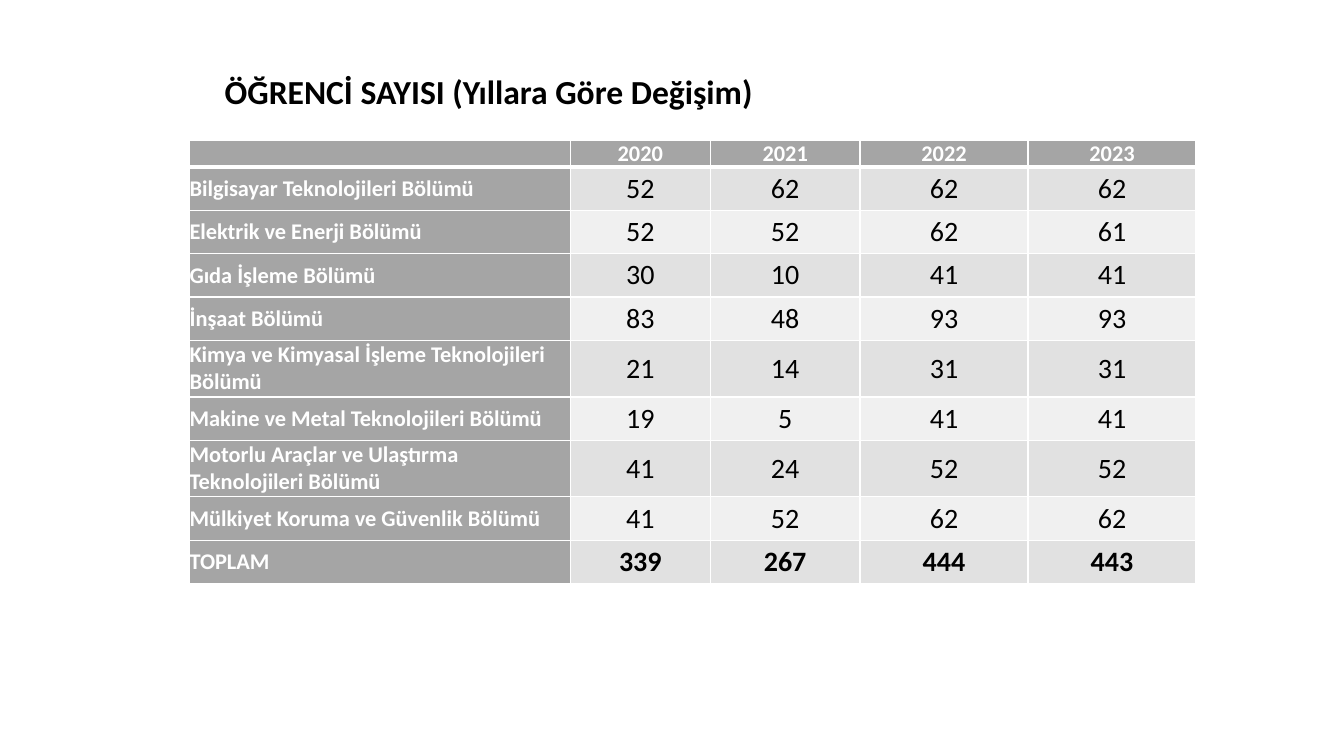
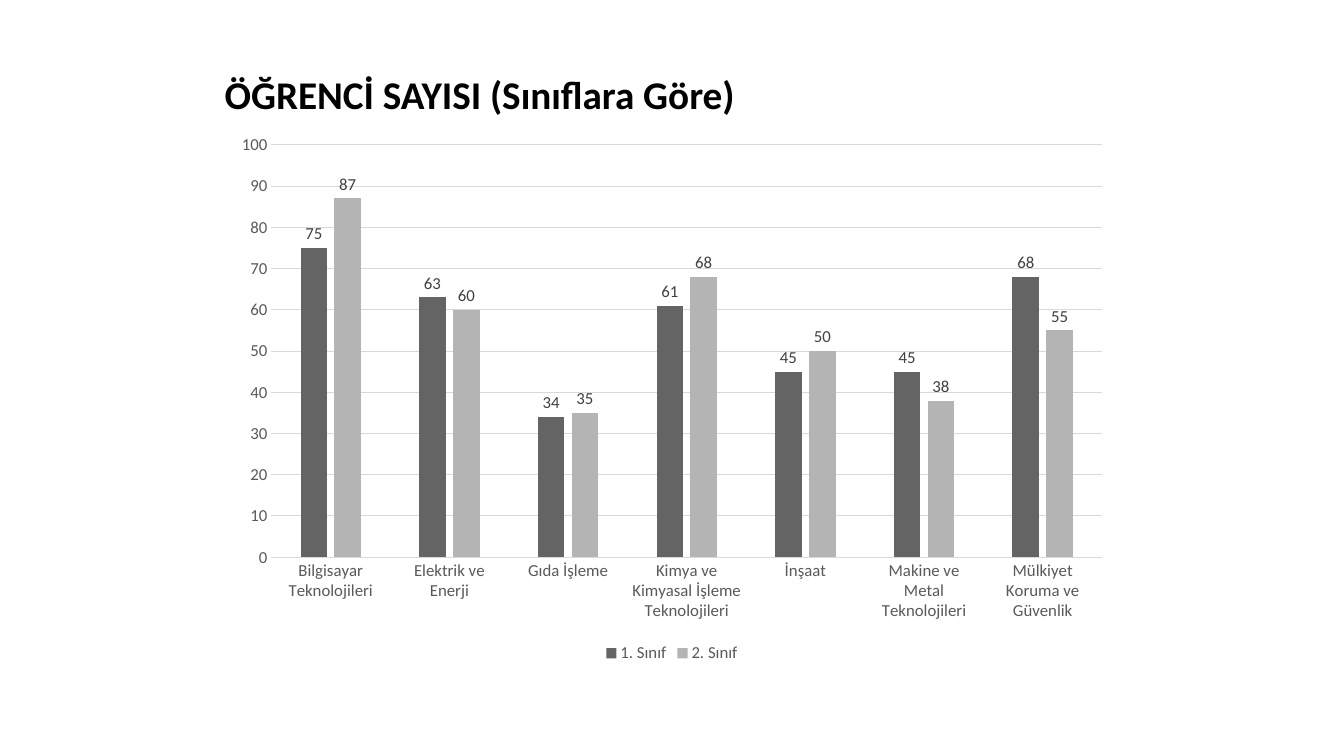
from lxml import etree
from pptx import Presentation
from pptx.chart.data import CategoryChartData
from pptx.dml.color import RGBColor
from pptx.enum.chart import XL_CHART_TYPE, XL_LABEL_POSITION, XL_LEGEND_POSITION, XL_TICK_MARK
from pptx.enum.text import MSO_ANCHOR, MSO_AUTO_SIZE, PP_ALIGN
from pptx.oxml.ns import qn
from pptx.util import Pt

COLUMN = XL_CHART_TYPE.COLUMN_CLUSTERED
OUTSIDE = XL_LABEL_POSITION.OUTSIDE_END
BOTTOM = XL_LEGEND_POSITION.BOTTOM
NO_TICK = XL_TICK_MARK.NONE
MIDDLE = MSO_ANCHOR.MIDDLE
LEFT, CENTER = PP_ALIGN.LEFT, PP_ALIGN.CENTER
FIT = MSO_AUTO_SIZE.SHAPE_TO_FIT_TEXT

FONT = "Calibri"
HEX = {
    "black": "000000", "white": "FFFFFF", "head": "A5A5A5",
    "odd": "E1E1E1", "even": "F0F0F0", "first": "646464",
    "second": "B4B4B4", "axis": "595959", "label": "404040", "grid": "D9D9D9",
}

YEARS = ["", "2020", "2021", "2022", "2023"]
ROWS = [
    ("Bilgisayar Teknolojileri Bölümü", 52, 62, 62, 62),
    ("Elektrik ve Enerji Bölümü", 52, 52, 62, 61),
    ("Gıda İşleme Bölümü", 30, 10, 41, 41),
    ("İnşaat Bölümü", 83, 48, 93, 93),
    ("Kimya ve Kimyasal İşleme Teknolojileri Bölümü", 21, 14, 31, 31),
    ("Makine ve Metal Teknolojileri Bölümü", 19, 5, 41, 41),
    ("Motorlu Araçlar ve Ulaştırma Teknolojileri Bölümü", 41, 24, 52, 52),
    ("Mülkiyet Koruma ve Güvenlik Bölümü", 41, 52, 62, 62),
    ("TOPLAM", 339, 267, 444, 443),
]
WIDTHS = [272, 100, 107, 120, 120]
HEAD, SINGLE, DOUBLE = 19.5, 30.9, 40.5
TALL = {5, 7}  # rows whose label takes two lines

CATS = [
    "Bilgisayar Teknolojileri", "Elektrik ve Enerji", "Gıda İşleme",
    "Kimya ve Kimyasal İşleme Teknolojileri", "İnşaat",
    "Makine ve Metal Teknolojileri", "Mülkiyet Koruma ve Güvenlik",
]
SERIES = [
    ("1. Sınıf", "first", [75, 63, 34, 61, 45, 45, 68]),
    ("2. Sınıf", "second", [87, 60, 35, 68, 50, 38, 55]),
]


def color(name):
    return RGBColor.from_string(HEX[name])


def style(font, size, tint, bold=False):
    for key, value in {"name": FONT, "size": Pt(size), "bold": bold}.items():
        setattr(font, key, value)
    font.color.rgb = color(tint)


def paint(fill, tint):
    fill.solid()
    fill.fore_color.rgb = color(tint)


def rule(line):
    line.color.rgb = color("grid")
    line.width = Pt(0.75)


def add_title(slide, text, size, box):
    frame = slide.shapes.add_textbox(*map(Pt, box)).text_frame
    frame.word_wrap = False
    frame.auto_size = FIT
    run = frame.paragraphs[0].add_run()
    run.text = text
    style(run.font, size, "black", True)


def edge(cell, widths):
    # Cell borders must come before the fill
    props = cell._tc.get_or_add_tcPr()
    for i, (side, width) in enumerate(zip("LRTB", widths)):
        line = etree.Element(qn(f"a:ln{side}"), w=str(Pt(width)))
        fill = etree.SubElement(line, qn("a:solidFill"))
        etree.SubElement(fill, qn("a:srgbClr"), val=HEX["white"])
        props.insert(i, line)


def fill_cell(cell, text, size, tint, bold, align, back):
    margins = dict.fromkeys(
        ["margin_left", "margin_right", "margin_top", "margin_bottom"], 0)
    for key, value in {**margins, "vertical_anchor": MIDDLE}.items():
        setattr(cell, key, value)
    para = cell.text_frame.paragraphs[0]
    para.alignment = align
    if text:
        run = para.add_run()
        run.text = text
        style(run.font, size, tint, bold)
    else:
        para._p.get_or_add_endParaRPr().set("sz", str(size * 100))
    paint(cell.fill, back)


def add_grid(slide, left, top):
    data = [YEARS, *ROWS]
    highs = [HEAD] + [DOUBLE if r in TALL else SINGLE
                      for r in range(1, len(data))]
    box = (left, top, sum(WIDTHS), sum(highs))
    table = slide.shapes.add_table(
        len(data), len(WIDTHS), *map(Pt, box)).table
    table.first_row = table.horz_banding = False
    for col, width in zip(table.columns, WIDTHS):
        col.width = Pt(width)
    for r, (high, values) in enumerate(zip(highs, data)):
        table.rows[r].height = Pt(high)
        for c, value in enumerate(values):
            cell = table.cell(r, c)
            align = CENTER if c else LEFT
            if r == 0 or c == 0:
                look = (16, "white", True, align, "head")
            else:
                total = r == len(ROWS)
                back = "odd" if r % 2 else "even"
                look = (20, "black", total, align, back)
            fill_cell(cell, str(value), *look)
            edge(cell, (1, 1, 3 if r == 1 else 1, 3 if r == 0 else 1))


def add_bars(slide, box):
    data = CategoryChartData()
    data.categories = CATS
    for name, _, values in SERIES:
        data.add_series(name, values)
    chart = slide.shapes.add_chart(COLUMN, *map(Pt, box), data).chart
    style(chart.font, 10, "black")
    chart.has_title = False

    # Legend
    chart.has_legend = True
    chart.legend.position = BOTTOM
    chart.legend.include_in_layout = False
    style(chart.legend.font, 12, "axis")

    # Axes
    cat, val = chart.category_axis, chart.value_axis
    for axis in (cat, val):
        axis.major_tick_mark = axis.minor_tick_mark = NO_TICK
        style(axis.tick_labels.font, 12, "axis")
    rule(cat.format.line)
    val.format.line.fill.background()
    val.has_major_gridlines = True
    rule(val.major_gridlines.format.line)
    for key, top in {"minimum_scale": 0, "maximum_scale": 100,
                     "major_unit": 10}.items():
        setattr(val, key, top)

    # Columns and their labels
    plot = chart.plots[0]
    for key, value in {"gap_width": 219, "overlap": -27,
                       "vary_by_categories": False}.items():
        setattr(plot, key, value)
    for series, (_, tint, _) in zip(plot.series, SERIES):
        paint(series.format.fill, tint)
        labels = series.data_labels
        labels.show_value = True
        labels.position = OUTSIDE
        style(labels.font, 12, "label")


def main():
    deck = Presentation()
    deck.slide_width, deck.slide_height = Pt(960), Pt(540)
    blank = deck.slide_layouts[6]

    # Students by year
    slide = deck.slides.add_slide(blank)
    add_title(slide, "ÖĞRENCİ SAYISI (Yıllara Göre Değişim)", 24,
              (153.4, 46.8, 395.3, 36))
    add_grid(slide, 135.4, 100)

    # Students by class
    slide = deck.slides.add_slide(blank)
    add_title(slide, "ÖĞRENCİ SAYISI (Sınıflara Göre)", 28,
              (153.4, 46.8, 383.8, 41))
    add_bars(slide, (160, 88.6, 640, 388))

    deck.save("out.pptx")


if __name__ == "__main__":
    main()
